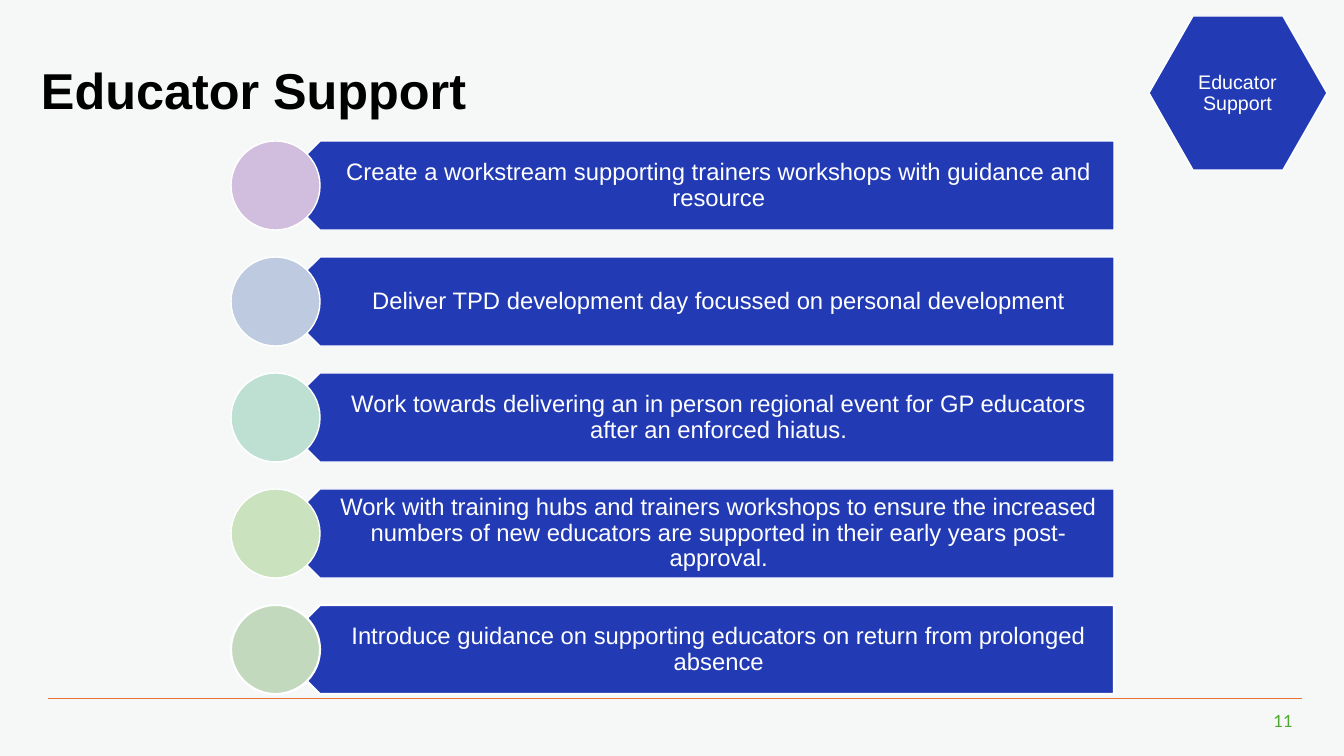
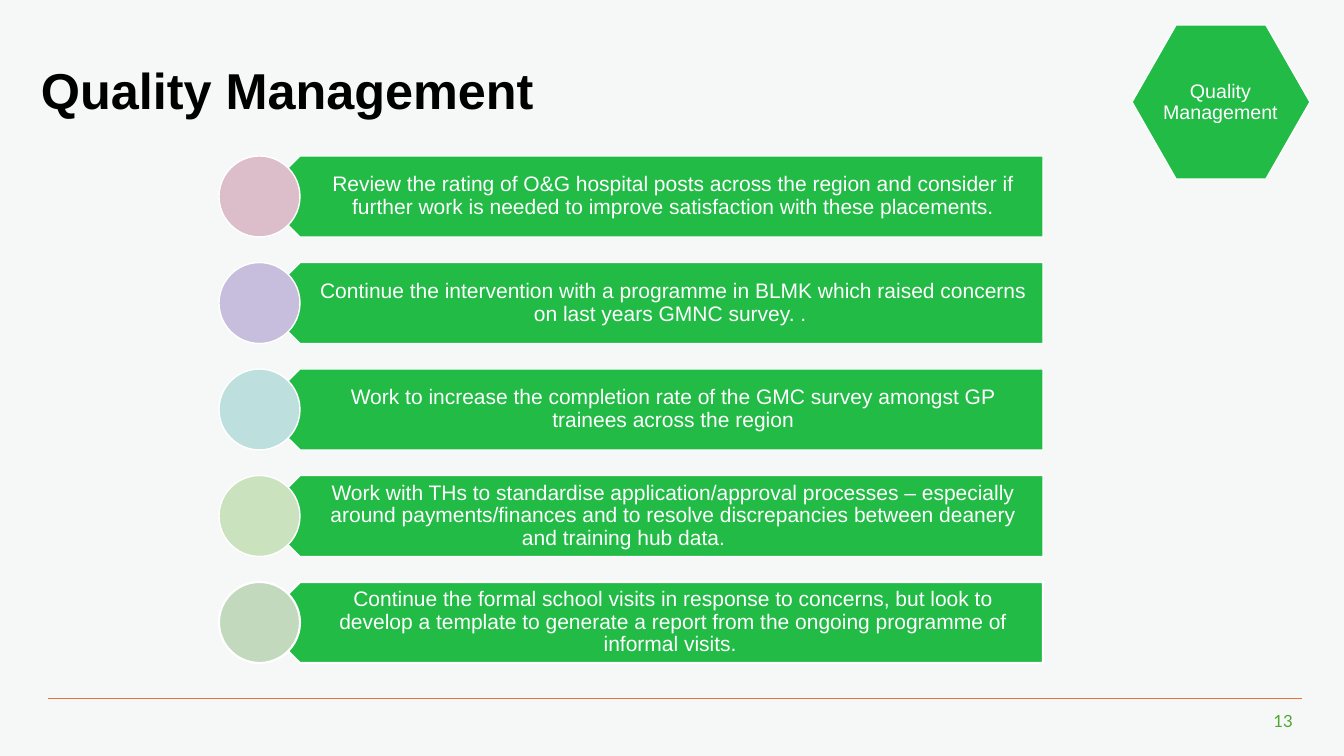
from lxml import etree
from pptx import Presentation
from pptx.dml.color import RGBColor
from pptx.enum.shapes import MSO_CONNECTOR, MSO_SHAPE
from pptx.enum.text import MSO_ANCHOR, PP_ALIGN
from pptx.oxml.ns import qn
from pptx.util import Pt

LEFT, CENTER, RIGHT = PP_ALIGN.LEFT, PP_ALIGN.CENTER, PP_ALIGN.RIGHT
TOP, MIDDLE = MSO_ANCHOR.TOP, MSO_ANCHOR.MIDDLE
PLATE, CIRCLE, HEXAGON = MSO_SHAPE.PENTAGON, MSO_SHAPE.OVAL, MSO_SHAPE.HEXAGON
STRAIGHT = MSO_CONNECTOR.STRAIGHT

PX = 914400 / 100.8
COLORS = {
    "back": "F6F8F8", "white": "FFFFFF", "title": "000000",
    "rule": "E97132", "number": "4EA72E", "blue": "223BB4", "green": "21BB46",
    "lilac": "D1BDDD", "steel": "BDCADF", "mint": "BDE0D3", "lime": "CAE2BD",
    "sage": "C2D9BE", "rose": "DBBEC9", "violet": "C7BDDD", "aqua": "BDE0DE",
}
STYLES = {
    "title": {"name": "Arial", "size": Pt(36), "bold": True},
    "number": {"name": "Lato", "size": Pt(12)},
    "badge": {"name": "Arial", "size": Pt(14)},
    17: {"name": "Arial", "size": Pt(17)},
    15: {"name": "Arial", "size": Pt(15)},
}

SLIDES = [
    {
        "title": "Educator Support", "number": "11", "accent": "blue",
        "badge": (1149, 16), "size": 17,
        "left": 231, "right": 1114, "first": 141, "last": 605, "row": 89,
        "items": [
            ("lilac", "Create a workstream supporting trainers workshops with guidance and resource"),
            ("steel", "Deliver TPD development day focussed on personal development"),
            ("mint", "Work towards delivering an in person regional event for GP educators "
                     "after an enforced hiatus."),
            ("lime", "Work with training hubs and trainers workshops to ensure the increased "
                     "numbers of new educators are supported in their early years post-approval."),
            ("sage", "Introduce guidance on supporting educators on return from prolonged absence"),
        ],
    },
    {
        "title": "Quality Management", "number": "13", "accent": "green",
        "badge": (1132, 25), "size": 15,
        "left": 219, "right": 1043, "first": 156, "last": 582, "row": 81,
        "items": [
            ("rose", "Review the rating of O&G hospital posts across the region and consider if "
                     "further work is needed to improve satisfaction with these placements."),
            ("violet", "Continue the intervention with a programme in BLMK which raised concerns "
                       "on last years GMNC survey. . "),
            ("aqua", "Work to increase the completion rate of the GMC survey amongst GP trainees "
                     "across the region"),
            ("lime", "Work with THs to standardise application/approval processes – especially "
                     "around payments/finances and to resolve discrepancies between deanery "
                     "and training hub data. \t\t"),
            ("sage", "Continue the formal school visits in response to concerns, but look to "
                     "develop a template to generate a report from the ongoing programme of "
                     "informal visits. "),
        ],
    },
]


def px(*lengths):
    return [round(n * PX) for n in lengths]


def color(name):
    return RGBColor.from_string(COLORS[name])


def write(sp, text, style, ink, align=CENTER, anchor=MIDDLE, insets=(0, 0, 0, 0),
          wrap=True, spacing=0.9):
    """Set the text of a shape; insets are left, top, right, bottom in px."""
    tf = sp.text_frame
    tf.word_wrap, tf.vertical_anchor = wrap, anchor
    tf.margin_left, tf.margin_top, tf.margin_right, tf.margin_bottom = px(*insets)
    p = tf.paragraphs[0]
    p.alignment, p.line_spacing = align, spacing
    r = p.add_run()
    r.text = text
    for key, value in STYLES[style].items():
        setattr(r.font, key, value)
    r.font.color.rgb = color(ink)


def add_shape(s, kind, box, fill, width=1):
    sp = s.shapes.add_shape(kind, *px(*box))
    sp.shadow.inherit = False
    sp.fill.solid()
    sp.fill.fore_color.rgb = color(fill)
    sp.line.color.rgb = color("white")
    sp.line.width = Pt(width)
    return sp


def add_text(s, box, *args, **formats):
    write(s.shapes.add_textbox(*px(*box)), *args, **formats)


def add_frame(s, title, number):
    """Background, footer rule, slide number and title."""
    s.background.fill.solid()
    s.background.fill.fore_color.rgb = color("back")
    add_text(s, (1262, 706, 41, 30), number, "number", "number", align=RIGHT, anchor=TOP,
             insets=(10, 5, 10, 5), wrap=False, spacing=1.0)
    rule = s.shapes.add_connector(STRAIGHT, *px(48, 698, 1302, 698))
    rule.line.color.rgb = color("rule")
    rule.line.width = Pt(0.5)
    etree.SubElement(rule._element.spPr, qn("a:effectLst"))
    add_text(s, (41, 45, 1257, 96), title, "title", "title", align=LEFT)


def add_rows(s, data):
    left, right, row, items = data["left"], data["right"], data["row"], data["items"]
    pitch = (data["last"] - data["first"]) / (len(items) - 1)
    plate_left, text_left = left + row / 2, left + row * 3 / 4
    insets = (row * 0.44, row * 0.08, row * 0.15, row * 0.08)
    for i, (dot, text) in enumerate(items):
        top = data["first"] + i * pitch
        width = 1.5 if i == len(items) - 1 else 1
        plate = add_shape(s, PLATE, (plate_left, top, right - plate_left, row),
                          data["accent"], width)
        plate.rotation = 180
        add_text(s, (text_left, top, right - text_left, row), text, data["size"], "white",
                 insets=insets)
        add_shape(s, CIRCLE, (left, top, row, row), dot, width)


def add_badge(s, data):
    left, top = data["badge"]
    hexagon = add_shape(s, HEXAGON, (left, top, 178, 154), data["accent"])
    hexagon.adjustments[0] = 0.286
    add_text(s, (left + 29, top + 26, 119, 103), data["title"], "badge", "white",
             insets=(1, 2, 1, 2))


def main():
    prs = Presentation()
    prs.slide_width, prs.slide_height = px(1344, 756)
    for data in SLIDES:
        s = prs.slides.add_slide(prs.slide_layouts[6])
        add_frame(s, data["title"], data["number"])
        add_rows(s, data)
        add_badge(s, data)
    prs.save("out.pptx")


if __name__ == "__main__":
    main()
